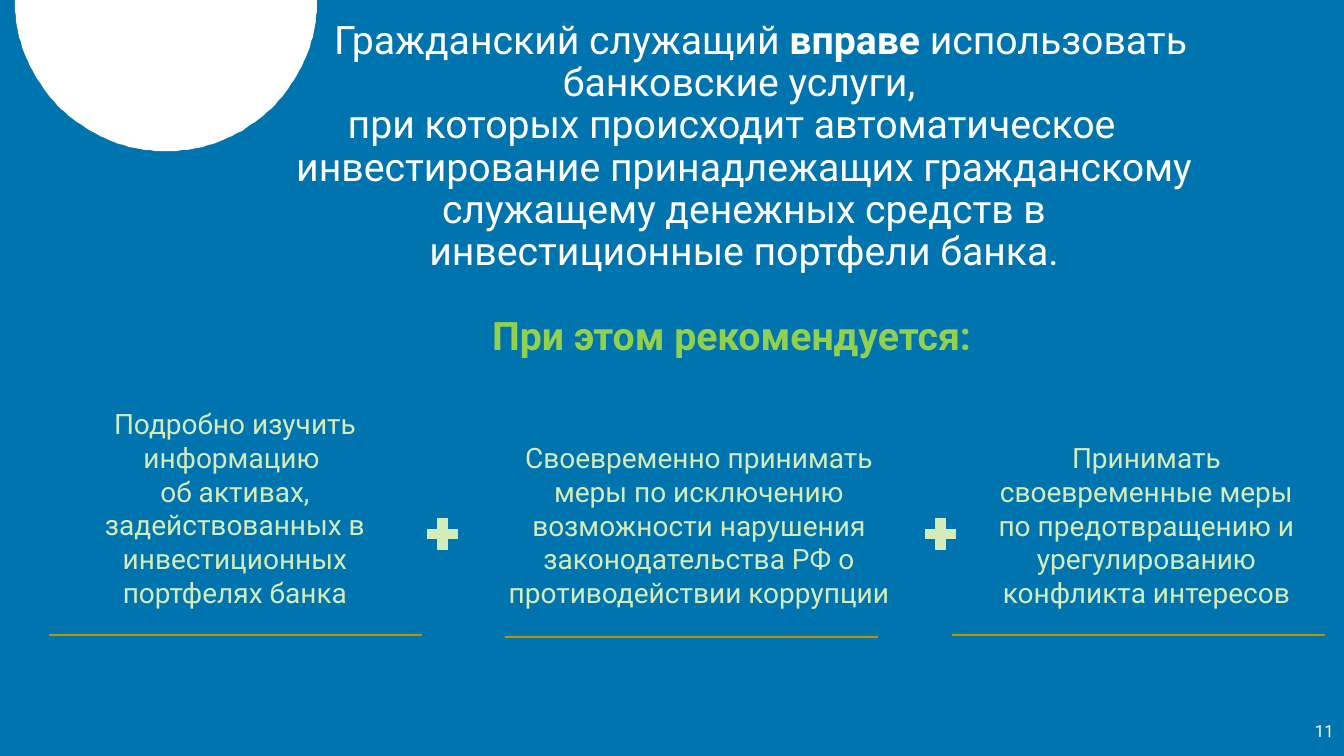
import math

from pptx import Presentation
from pptx.dml.color import RGBColor
from pptx.enum.shapes import MSO_SHAPE
from pptx.enum.text import MSO_ANCHOR, MSO_AUTO_SIZE, PP_ALIGN
from pptx.util import Pt

PX = 914400 / 100.8
FONT = "Roboto"
RECT, PLUS = MSO_SHAPE.RECTANGLE, MSO_SHAPE.MATH_PLUS
CENTER, LEFT = PP_ALIGN.CENTER, PP_ALIGN.LEFT
TOP, MIDDLE = MSO_ANCHOR.TOP, MSO_ANCHOR.MIDDLE
NO_FIT = MSO_AUTO_SIZE.NONE
COLORS = {
    "back": "0074AF",
    "white": "FFFFFF",
    "mint": "D3ECB9",
    "green": "92D050",
    "gold": "BF9000",
}
TITLE = [
    (33, 0, [("Гражданский служащий ", "white", False),
             ("вправе", "white", True),
             (" использовать банковские услуги, ", "white", False)]),
    (-25, 0, [("при которых происходит автоматическое инвестирование "
               "принадлежащих гражданскому служащему денежных средств в "
               "инвестиционные портфели банка.", "white", False)]),
    (-25, 30, [("При этом рекомендуется:", "green", True)]),
]
ADVICE = [
    ((71, 402, 328, 214), ["Подробно изучить информацию ",
                           "об активах, задействованных в инвестиционных "
                           "портфелях банка"]),
    ((486, 436, 426, 180), ["Своевременно принимать меры по исключению "
                            "возможности нарушения законодательства РФ о "
                            "противодействии коррупции"]),
    ((977, 436, 339, 180), ["Принимать своевременные меры по предотвращению "
                            "и урегулированию конфликта интересов"]),
]
RULES = [(49, 634), (505, 636), (952, 634)]
PLUS_LEFTS = [422, 920]


def emu(*lengths):
    """Turn pixel lengths into EMU."""
    return [round(n * PX) for n in lengths]


def rgb(name):
    """Return a named colour."""
    return RGBColor.from_string(COLORS[name])


def add_run(p, text, size, color, bold=False):
    """Add one formatted run to a paragraph."""
    r = p.add_run()
    r.text = text
    r.font.name = FONT
    r.font.size = Pt(size)
    r.font.bold = bold
    r.font.color.rgb = rgb(color)


def fill_title(s):
    """Place the title and write its indented paragraphs."""
    title = s.shapes.title
    title.left, title.top, title.width, title.height = emu(245, 14, 973, 351)
    tf = title.text_frame
    tf.word_wrap = True
    tf.auto_size = NO_FIT
    tf.vertical_anchor = MIDDLE
    for i, (indent, before, runs) in enumerate(TITLE):
        p = tf.add_paragraph() if i else tf.paragraphs[0]
        p.alignment = CENTER
        p.line_spacing = 0.9
        p.space_before = Pt(before)
        pPr = p._p.get_or_add_pPr()
        for key, length in zip(("marL", "indent"), emu(25, indent)):
            pPr.set(key, str(length))
        for text, color, bold in runs:
            add_run(p, text, 28, color, bold)


def add_text(s, box, lines, size, color, align=CENTER, inset=(10, 5)):
    """Add a text box with one paragraph per line."""
    tf = s.shapes.add_textbox(*emu(*box)).text_frame
    tf.word_wrap = True
    tf.vertical_anchor = TOP
    side, edge = emu(*inset)
    tf.margin_left = tf.margin_right = side
    tf.margin_top = tf.margin_bottom = edge
    for i, line in enumerate(lines):
        p = tf.add_paragraph() if i else tf.paragraphs[0]
        p.alignment = align
        add_run(p, line, size, color)


def paint(sp, color, line_width=0):
    """Give a shape a flat fill and an optional outline."""
    sp.shadow.inherit = False
    sp.fill.solid()
    sp.fill.fore_color.rgb = rgb(color)
    if line_width:
        sp.line.color.rgb = rgb(color)
        sp.line.width = Pt(line_width)
    else:
        sp.line.fill.background()


def add_shape(s, kind, box, color, line_width=0):
    """Add a painted preset shape."""
    paint(s.shapes.add_shape(kind, *emu(*box)), color, line_width)


def add_half_disc(s, cx, radius, color):
    """Add a half disc hanging from the top edge."""
    steps = 90
    arc = [(cx + radius * math.cos(math.pi * i / steps),
            radius * math.sin(math.pi * i / steps)) for i in range(steps + 1)]
    builder = s.shapes.build_freeform(*arc[0], scale=PX)
    builder.add_line_segments(arc[1:], close=True)
    paint(builder.convert_to_shape(), color)


def main():
    """Build the slide and save it."""
    prs = Presentation()
    prs.slide_width, prs.slide_height = emu(1344, 756)
    s = prs.slides.add_slide(prs.slide_layouts[5])
    s.background.fill.solid()
    s.background.fill.fore_color.rgb = rgb("back")
    add_half_disc(s, 166, 151, "white")
    fill_title(s)
    for box, lines in ADVICE:
        add_text(s, box, lines, 20, "mint")
    for left, top in RULES:
        add_shape(s, RECT, (left, top, 373, 2), "gold")
    for left in PLUS_LEFTS:
        add_shape(s, PLUS, (left, 513, 41, 42), "mint", 0.5)
    add_text(s, (1315, 721, 29, 20), ["11"], 12, "white", LEFT, (0, 0))
    prs.save("out.pptx")


if __name__ == "__main__":
    main()
